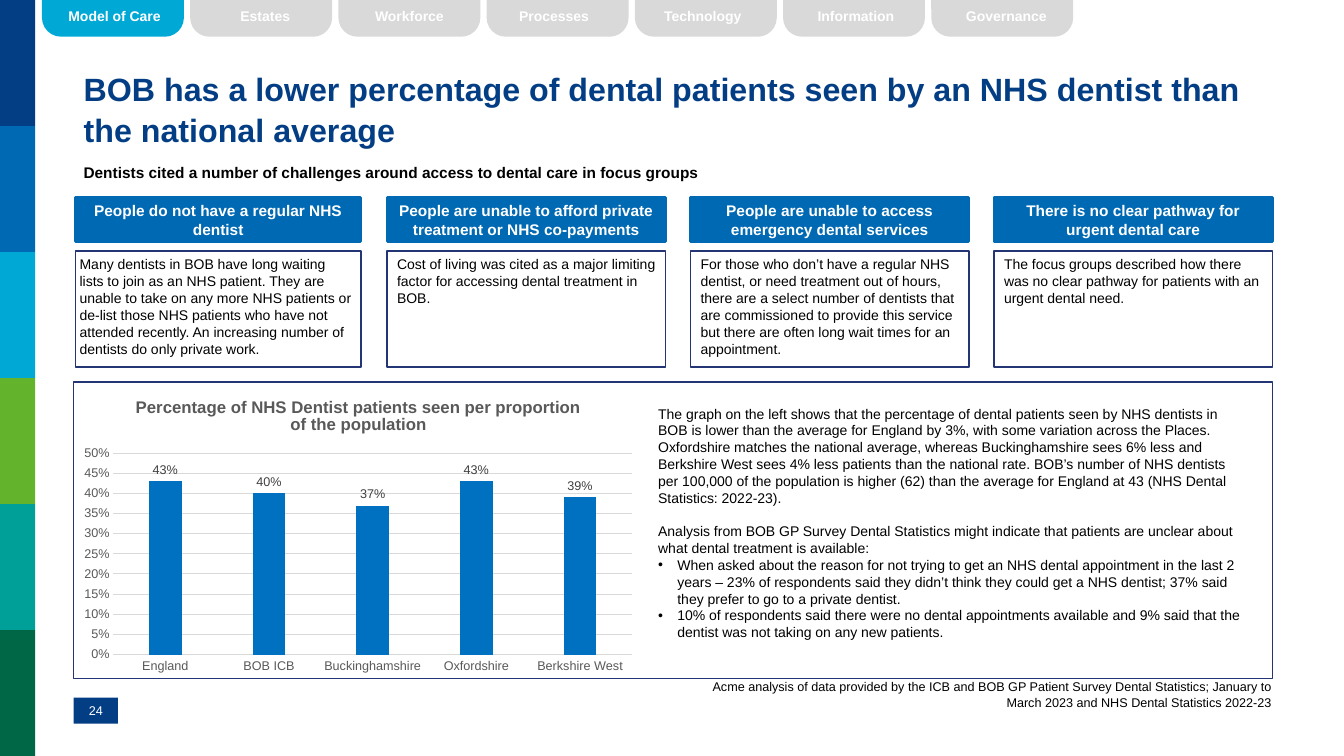
from lxml import etree
from pptx import Presentation
from pptx.chart.data import CategoryChartData
from pptx.dml.color import RGBColor
from pptx.enum.chart import XL_CHART_TYPE, XL_LABEL_POSITION, XL_TICK_MARK
from pptx.enum.shapes import MSO_SHAPE
from pptx.enum.text import MSO_ANCHOR, MSO_AUTO_SIZE, PP_ALIGN
from pptx.oxml.ns import qn
from pptx.util import Inches, Pt

RECT = MSO_SHAPE.RECTANGLE
TAB = MSO_SHAPE.ROUND_2_SAME_RECTANGLE
LEFT, CENTER, RIGHT = PP_ALIGN.LEFT, PP_ALIGN.CENTER, PP_ALIGN.RIGHT
TOP, MIDDLE = MSO_ANCHOR.TOP, MSO_ANCHOR.MIDDLE
COLUMN = XL_CHART_TYPE.COLUMN_CLUSTERED
OUTSIDE = XL_LABEL_POSITION.OUTSIDE_END
NO_TICK = XL_TICK_MARK.NONE

FONT = "Arial"
NAVY, BLUE, CYAN, EDGE = "033E85", "0069B3", "00A8D6", "233575"
BLACK, WHITE, GREY, DARK = "000000", "FFFFFF", "D9D9D9", "595959"
INSET = (0.1, 0.05, 0.1, 0.05)

BANDS = [NAVY, BLUE, CYAN, "64B32D", "009F97", "006746"]
# name, left of its label, alignment
TABS = [
    ("Model of Care", 0.58, LEFT),
    ("Estates", 1.94, CENTER),
    ("Workforce", 3.37, CENTER),
    ("Processes", 5.05, LEFT),
    ("Technology", 6.28, CENTER),
    ("Information", 8.01, LEFT),
    ("Governance", 9.29, CENTER),
]
# left, width, left inset, heading, detail
CARDS = [
    (0.75, 2.83, 0.04, "People do not have a regular NHS dentist",
     "Many dentists in BOB have long waiting lists to join as an NHS patient. "
     "They are unable to take on any more NHS patients or de-list those NHS "
     "patients who have not attended recently. An increasing number of "
     "dentists do only private work."),
    (3.84, 2.76, 0.1,
     "People are unable to afford private treatment or NHS co-payments",
     "Cost of living was cited as a major limiting factor for accessing "
     "dental treatment in BOB."),
    (6.85, 2.76, 0.1, "People are unable to access emergency dental services",
     "For those who don’t have a regular NHS dentist, or need treatment out of "
     "hours, there are a select number of dentists that are commissioned to "
     "provide this service but there are often long wait times for an "
     "appointment."),
    (9.86, 2.76, 0.1, "There is no clear pathway for urgent dental care",
     "The focus groups described how there was no clear pathway for patients "
     "with an urgent dental need."),
]
SEEN = {"England": 0.43, "BOB ICB": 0.40, "Buckinghamshire": 0.37,
        "Oxfordshire": 0.43, "Berkshire West": 0.39}
GRAPH = (
    "The graph on the left shows that the percentage of dental patients seen "
    "by NHS dentists in BOB is lower than the average for England by 3%, with "
    "some variation across the Places. Oxfordshire matches the national "
    "average, whereas Buckinghamshire sees 6% less and Berkshire West sees 4% "
    "less patients than the national rate. BOB’s number of NHS dentists per "
    "100,000 of the population is higher (62) than the average for England at "
    "43 (NHS Dental Statistics: 2022-23).")
SURVEY = (
    "Analysis from BOB GP Survey Dental Statistics might indicate that "
    "patients are unclear about what dental treatment is available:")
POINTS = [
    "When asked about the reason for not trying to get an NHS dental "
    "appointment in the last 2 years – 23% of respondents said they didn’t "
    "think they could get a NHS dentist; 37% said they prefer to go to a "
    "private dentist.",
    "10% of respondents said there were no dental appointments available and "
    "9% said that the dentist was not taking on any new patients.",
]


def rgb(code):
    return RGBColor.from_string(code)


def style(font, size, color, bold=False):
    font.name, font.size, font.bold = FONT, Pt(size), bold
    font.color.rgb = rgb(color)


def bullet(para):
    props = para._p.get_or_add_pPr()
    props.set("marL", str(Inches(0.19)))
    props.set("indent", str(Inches(-0.19)))
    etree.SubElement(props, qn("a:buFont")).set("typeface", FONT)
    etree.SubElement(props, qn("a:buChar")).set("char", "•")


def write(shape, text, size=10, color=BLACK, bold=False, align=LEFT,
          anchor=TOP, inset=INSET, before=0, after=0, line=None,
          dot=False, more=False):
    """Put one paragraph in a shape; more=True adds it below earlier ones."""
    frame = shape.text_frame
    frame.word_wrap = True
    frame.auto_size = MSO_AUTO_SIZE.NONE
    frame.vertical_anchor = anchor
    (frame.margin_left, frame.margin_top,
     frame.margin_right, frame.margin_bottom) = map(Inches, inset)
    para = frame.add_paragraph() if more else frame.paragraphs[0]
    if dot:
        bullet(para)
    para.alignment = align
    para.space_before, para.space_after = Pt(before), Pt(after)
    if line:
        para.line_spacing = line
    run = para.add_run()
    run.text = text
    style(run.font, size, color, bold)


def block(slide, box, fill=None, line=None, width=1, kind=RECT):
    shape = slide.shapes.add_shape(kind, *map(Inches, box))
    shape.shadow.inherit = False
    if fill:
        shape.fill.solid()
        shape.fill.fore_color.rgb = rgb(fill)
    else:
        shape.fill.background()
    if line:
        shape.line.color.rgb = rgb(line)
        shape.line.width = Pt(width)
    else:
        shape.line.fill.background()
    return shape


def label(slide, box, text, **form):
    shape = slide.shapes.add_textbox(*map(Inches, box))
    write(shape, text, **form)
    return shape


def add_tab(slide, index, name, left, align):
    color = GREY if index else CYAN
    shape = block(slide, (0.43 + 1.47 * index, 0, 1.38, 0.35), color, color,
                  2, TAB)
    shape.adjustments[0] = 0.5
    shape.rotation = 180
    label(slide, (left, 0.03, 1.38, 0.27), name, color=WHITE, bold=True,
          align=align)


def add_card(slide, left, width, pad, head, body):
    top = block(slide, (left, 1.96, width, 0.44), BLUE, BLUE, 2)
    write(top, head, size=11, color=WHITE, bold=True, align=CENTER,
          anchor=MIDDLE)
    base = block(slide, (left, 2.49, width, 1.15), WHITE, EDGE)
    write(base, body, after=3, inset=(pad, 0.05, 0.1, 0.05))


def place(chart):
    """Fix the inner plot area, as shares of the chart."""
    area = chart._chartSpace.chart.plotArea
    for old in area.findall(qn("c:layout")):
        area.remove(old)
    layout = etree.Element(qn("c:layout"))
    area.insert(0, layout)
    manual = etree.SubElement(layout, qn("c:manualLayout"))
    for tag, val in [("layoutTarget", "inner"), ("xMode", "edge"),
                     ("yMode", "edge"), ("x", 0.07), ("y", 0.24),
                     ("w", 0.91), ("h", 0.68)]:
        etree.SubElement(manual, qn("c:" + tag)).set("val", str(val))


def add_graph(slide):
    data = CategoryChartData(number_format="0%")
    data.categories = list(SEEN)
    data.add_series("Series 1", list(SEEN.values()))
    box = map(Inches, (0.73, 3.79, 5.65, 2.94))
    chart = slide.shapes.add_chart(COLUMN, *box, data).chart
    style(chart.font, 10, BLACK)
    chart.has_legend = False
    chart.has_title = True
    chart.chart_title.include_in_layout = False
    para = chart.chart_title.text_frame.paragraphs[0]
    run = para.add_run()
    run.text = ("Percentage of NHS Dentist patients seen per proportion "
                "of the population")
    style(run.font, 12, DARK, True)

    cats, vals = chart.category_axis, chart.value_axis
    for axis in (cats, vals):
        axis.major_tick_mark = axis.minor_tick_mark = NO_TICK
        style(axis.tick_labels.font, 9, DARK)
    vals.minimum_scale, vals.maximum_scale, vals.major_unit = 0, 0.5, 0.05
    vals.tick_labels.number_format = "0%"
    vals.tick_labels.number_format_is_linked = False
    vals.format.line.fill.background()
    for part in (cats, vals.major_gridlines):
        part.format.line.color.rgb = rgb(GREY)
        part.format.line.width = Pt(0.75)

    plot = chart.plots[0]
    plot.gap_width, plot.overlap = 219, -27
    plot.vary_by_categories = False
    bars = plot.series[0]
    bars.format.fill.solid()
    bars.format.fill.fore_color.rgb = rgb("0070C0")
    marks = bars.data_labels
    marks.show_value = True
    marks.position = OUTSIDE
    marks.number_format, marks.number_format_is_linked = "0%", False
    style(marks.font, 9, "404040")
    place(chart)


def main():
    deck = Presentation()
    deck.slide_width, deck.slide_height = Inches(13.33), Inches(7.5)
    slide = deck.slides.add_slide(deck.slide_layouts[5])
    for index, color in enumerate(BANDS):
        block(slide, (0, 1.25 * index, 0.35, 1.25), color)
    title = slide.shapes.title
    title.left, title.top, title.width, title.height = map(
        Inches, (0.73, 0.65, 11.89, 0.85))
    write(title, "BOB has a lower percentage of dental patients seen by an "
          "NHS dentist than the national average", size=23, color=NAVY,
          bold=True, anchor=MIDDLE, line=1.05)
    label(slide, (0.73, 1.57, 11.89, 0.29),
          "Dentists cited a number of challenges around access to dental care "
          "in focus groups", size=11, bold=True)
    for index, tab in enumerate(TABS):
        add_tab(slide, index, *tab)
    for card in CARDS:
        add_card(slide, *card)
    block(slide, (0.73, 3.79, 11.89, 2.94), line=EDGE)
    add_graph(slide)
    notes = label(slide, (6.43, 3.97, 6.03, 2.46), GRAPH)
    write(notes, SURVEY, before=12, more=True)
    for point in POINTS:
        write(notes, point, dot=True, more=True)
    label(slide, (6.78, 6.74, 5.83, 0.3),
          "Acme analysis of data provided by the ICB and BOB GP Patient Survey "
          "Dental Statistics; January to March 2023 and NHS Dental Statistics "
          "2022-23", size=9, align=RIGHT, inset=(0, 0, 0, 0))
    page = block(slide, (0.73, 6.92, 0.44, 0.26), NAVY)
    write(page, "24", size=9, color=WHITE, align=CENTER, anchor=MIDDLE,
          inset=(0, 0, 0, 0))
    deck.save("out.pptx")


if __name__ == "__main__":
    main()
